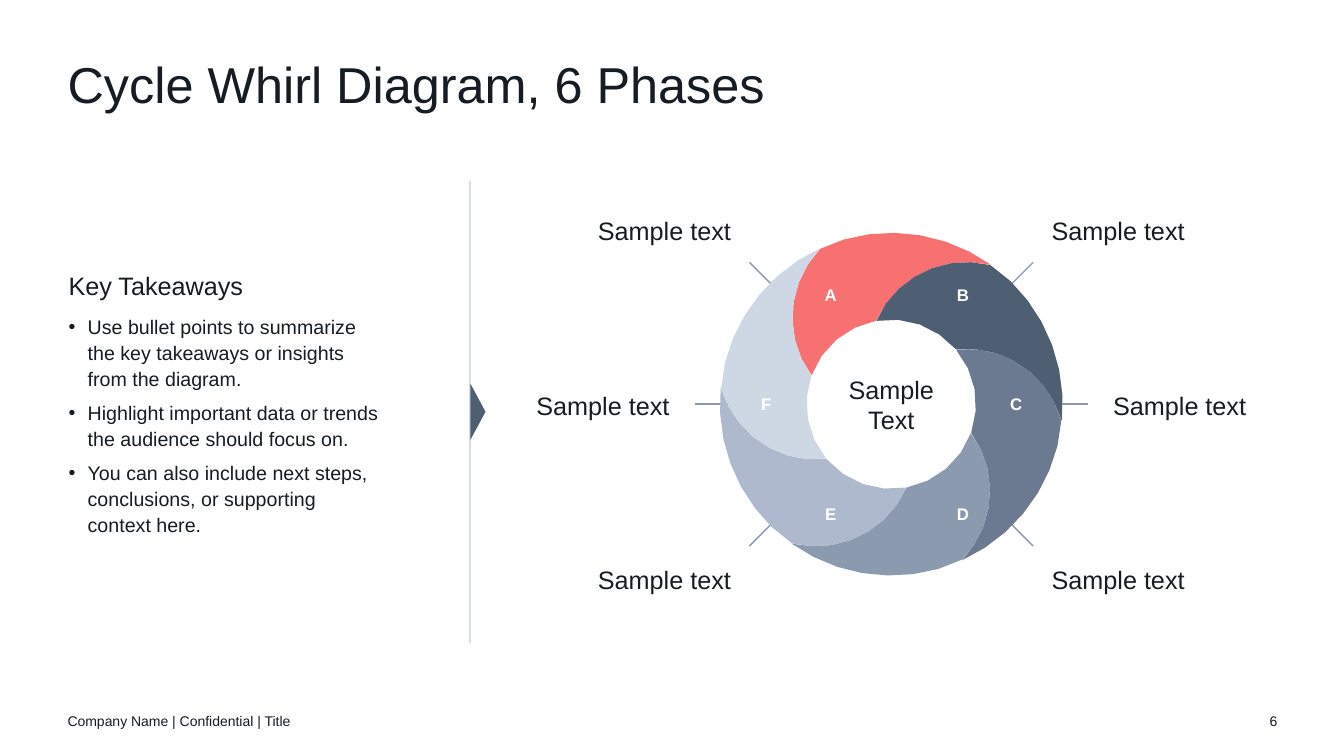
import math
import pptx
import pptx.util
import pptx.dml.color
import pptx.enum.shapes
import pptx.enum.text
from lxml import etree

Inches = pptx.util.Inches
Pt = pptx.util.Pt
RGB = pptx.dml.color.RGBColor.from_string
Align = pptx.enum.text.PP_ALIGN
Anchor = pptx.enum.text.MSO_ANCHOR
Fit = pptx.enum.text.MSO_AUTO_SIZE
Line = pptx.enum.shapes.MSO_CONNECTOR.STRAIGHT
Shape = pptx.enum.shapes.MSO_SHAPE

hues = {
    "ink": "151C23", "white": "FFFFFF", "rule": "D9DEE5", "tick": "8C9AB0",
    "A": "F87171", "B": "4E5E73", "C": "6B7A90",
    "D": "8C9AB0", "E": "AFB9CD", "F": "CED8E4",
}

deck = pptx.Presentation()
deck.slide_width = Inches(13.33)
deck.slide_height = Inches(7.5)
slide = deck.slides.add_slide(deck.slide_layouts[6])
shapes = slide.shapes


def write(box, lines, size, align=Align.LEFT, anchor=Anchor.MIDDLE, hue="ink", bold=False):
    frame = shapes.add_textbox(*map(Inches, box)).text_frame
    frame.text = "\n".join(lines)
    form = {"word_wrap": True, "vertical_anchor": anchor, "margin_left": 0,
            "margin_right": 0, "margin_top": 0, "margin_bottom": 0}
    for key, value in form.items():
        setattr(frame, key, value)
    for para in frame.paragraphs:
        para.alignment = align
        font = para.runs[0].font
        for key, value in {"name": "Arial", "size": Pt(size), "bold": bold}.items():
            setattr(font, key, value)
        font.color.rgb = RGB(hues[hue])
    return frame


def polar(mid, reach, angle):
    turn = math.radians(angle)
    return mid[0] + reach * math.sin(turn), mid[1] - reach * math.cos(turn)


write((0.67, 6.95, 4.5, 0.4), ["Company Name | Confidential | Title"], 10)
write((12.17, 6.95, 0.5, 0.4), ["6"], 10, Align.RIGHT)

hub = (8.84, 4.01)
rules = [((4.66, 1.8), (4.66, 6.38), "rule")]
for angle in (-45, 45, 90, 135, 225, 270):
    near, far = (1.33, 1.99) if angle % 90 else (1.25, 1.95)
    rules.append((polar(hub, near, angle), polar(hub, far, angle), "tick"))
for start, end, hue in rules:
    rule = shapes.add_connector(Line, *map(Inches, start + end))
    rule.line.color.rgb = RGB(hues[hue])
    rule.line.width = Pt(1)
    etree.SubElement(rule._element.spPr, pptx.oxml.ns.qn("a:effectLst"))

blades = []
for index, name in enumerate("ABCDEF"):
    turn = index * 60
    arcs = [
        (polar(hub, 0.86, turn), 0.98, -46, -126, 7),
        (hub, 0.84, -70, -10.5, 4),
        (polar(hub, 0.86, turn + 60), 0.98, -66, 14, 7),
        (hub, 1.7, 35.5, -24.5, 7),
    ]
    dots = []
    for mid, reach, first, last, steps in arcs:
        for step in range(steps):
            spot = polar(mid, reach, turn + first + (last - first) * step / steps)
            dots.append(tuple(map(Inches, spot)))
    path = shapes.build_freeform(*dots[0])
    path.add_line_segments(dots[1:], close=True)
    blades.append((path.convert_to_shape(), name))

arrow = shapes.add_shape(Shape.ISOSCELES_TRIANGLE, *map(Inches, (4.46, 4.01, 0.56, 0.15)))
arrow.rotation = 90
for shape, hue in blades + [(arrow, "B")]:
    shape.shadow.inherit = False
    shape.fill.solid()
    shape.fill.fore_color.rgb = RGB(hues[hue])
    shape.line.fill.background()

for y, pair, left, right in ((2.77, "AB", 8.09, 9.4), (3.86, "FC", 7.45, 9.93), (4.95, "ED", 8.09, 9.4)):
    for name, x in zip(pair, (left, right)):
        write((x, y, 0.3, 0.3), [name], 12, Align.CENTER, hue="white", bold=True)

for y, left, right, width, anchor in (
    (2.14, 5.4, 10.43, 1.85, Anchor.BOTTOM),
    (3.87, 5.04, 11.04, 1.6, Anchor.MIDDLE),
    (5.6, 5.4, 10.43, 1.85, Anchor.TOP),
):
    for x, align in ((left, Align.RIGHT), (right, Align.LEFT)):
        label = write((x, y, width, 0.3), ["Sample text"], 18, align, anchor)
        label.auto_size = Fit.SHAPE_TO_FIT_TEXT
write((8.24, 3.41, 1.2, 1.2), ["Sample Text"], 18, Align.CENTER)

notes = write((0.68, 2.05, 3.1, 3.87), [
    "Key Takeaways",
    "Use bullet points to summarize the key takeaways or insights from the diagram.",
    "Highlight important data or trends the audience should focus on.",
    "You can also include next steps, conclusions, or supporting context here.",
], 14)
for para in notes.paragraphs:
    para.line_spacing = 1.1
    para.space_before = Pt(6)
head, *points = notes.paragraphs
head.space_after = Pt(3)
head.runs[0].font.size = Pt(18)
for para in points:
    props = para._p.get_or_add_pPr()
    props.set("marL", str(Inches(0.19)))
    props.set("indent", str(-Inches(0.19)))
    for tag, key, value in (("a:buFont", "typeface", "Arial"), ("a:buChar", "char", "•")):
        etree.SubElement(props, pptx.oxml.ns.qn(tag)).set(key, value)

title = write((0.67, 0.6, 12, 0.6), ["Cycle Whirl Diagram, 6 Phases"], 36, anchor=Anchor.TOP)
title.paragraphs[0].line_spacing = 0.9

deck.save("out.pptx")
